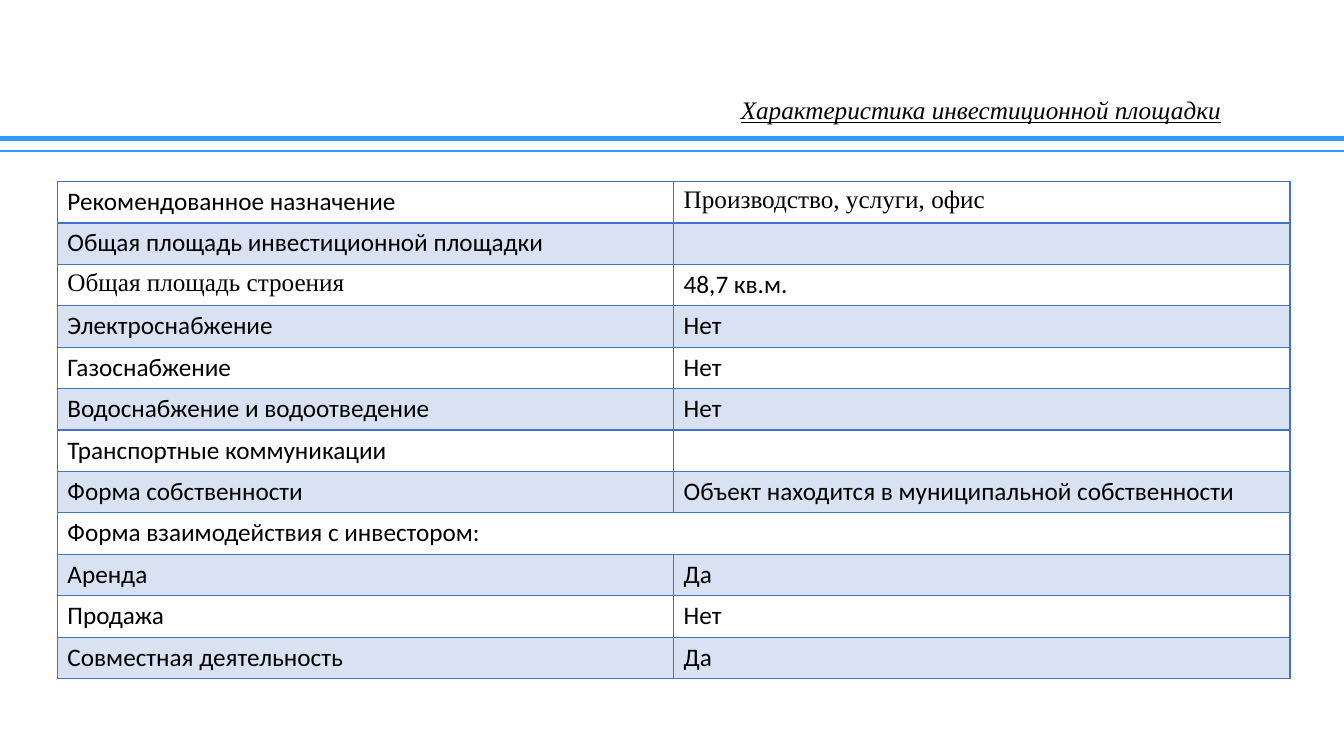
"""Build the slide that describes an investment site."""
from lxml.etree import SubElement
from pptx import Presentation
from pptx.dml.color import RGBColor
from pptx.enum.shapes import MSO_CONNECTOR
from pptx.enum.text import MSO_ANCHOR, PP_ALIGN
from pptx.oxml.ns import qn
from pptx.util import Pt

SLIDE_WIDTH, SLIDE_HEIGHT = 960, 540
ROW_HEIGHT, COLUMN_WIDTH = 29.6, 440.2
SANS, SERIF = "Calibri", "Times New Roman"
BLACK, RULE_BLUE, TABLE_BLUE = "000000", "3399FF", "4472C4"
SITE_ROWS = [
    ("Рекомендованное назначение", "Производство, услуги, офис"),
    ("Общая площадь инвестиционной площадки", ""),
    ("Общая площадь строения", "48,7 кв.м."),
    ("Электроснабжение", "Нет"),
    ("Газоснабжение", "Нет"),
    ("Водоснабжение и водоотведение", "Нет"),
    ("Транспортные коммуникации", ""),
    ("Форма собственности", "Объект находится в муниципальной собственности"),
    ("Форма взаимодействия с инвестором:",),
    ("Аренда", "Да"),
    ("Продажа", "Нет"),
    ("Совместная деятельность", "Да"),
]
SERIF_TEXTS = {"Производство, услуги, офис", "Общая площадь строения"}


def color(value):
    return RGBColor.from_string(value)


def add_text(paragraph, text, font_name):
    run = paragraph.add_run()
    run.text = text
    run.font.name = font_name
    run.font.size = Pt(18)
    run.font.color.rgb = color(BLACK)
    return run


def add_rule(slide, top, weight):
    rule = slide.shapes.add_connector(
        MSO_CONNECTOR.STRAIGHT, Pt(0), Pt(top), Pt(SLIDE_WIDTH), Pt(top))
    rule.line.color.rgb = color(RULE_BLUE)
    rule.line.width = Pt(weight)
    SubElement(rule._element.spPr, qn("a:effectLst"))


def format_title(title, text):
    title.left, title.top, title.width, title.height = Pt(480), Pt(70), Pt(441.4), Pt(19.4)
    frame = title.text_frame
    frame.word_wrap = True
    frame.vertical_anchor = MSO_ANCHOR.MIDDLE
    paragraph = frame.paragraphs[0]
    paragraph.alignment = PP_ALIGN.CENTER
    paragraph.line_spacing = 0.9
    run = add_text(paragraph, text, SERIF)
    run.font.italic = True
    run.font.underline = True


def set_borders(cell, bottom_weight):
    properties = cell._tc.get_or_add_tcPr()
    weights = {"a:lnL": 1, "a:lnR": 1, "a:lnT": 1, "a:lnB": bottom_weight}
    for position, (tag, weight) in enumerate(weights.items()):
        line = SubElement(properties, qn(tag), w=str(Pt(weight)))
        fill = SubElement(line, qn("a:solidFill"))
        SubElement(fill, qn("a:srgbClr"), val=TABLE_BLUE)
        properties.insert(position, line)


def set_fill(cell, shaded):
    if not shaded:
        cell.fill.background()
        return
    cell.fill.solid()
    cell.fill.fore_color.rgb = color(TABLE_BLUE)
    tint = cell._tc.tcPr.find(qn("a:solidFill")).find(qn("a:srgbClr"))
    SubElement(tint, qn("a:alpha"), val="20000")


def add_site_table(slide, rows):
    table = slide.shapes.add_table(
        len(rows), 2, Pt(41), Pt(129.6),
        Pt(2 * COLUMN_WIDTH), Pt(len(rows) * ROW_HEIGHT)).table
    table.first_row = False
    table.horz_banding = False
    for column in table.columns:
        column.width = Pt(COLUMN_WIDTH)
    for row_index, texts in enumerate(rows):
        table.rows[row_index].height = Pt(ROW_HEIGHT)
        for cell in table.rows[row_index].cells:
            set_fill(cell, row_index % 2 == 1)
            set_borders(cell, 2 if row_index == 0 else 1)
        if len(texts) == 1:
            table.cell(row_index, 0).merge(table.cell(row_index, 1))
        for column_index, text in enumerate(texts):
            if text:
                paragraph = table.cell(row_index, column_index).text_frame.paragraphs[0]
                add_text(paragraph, text, SERIF if text in SERIF_TEXTS else SANS)


def main():
    presentation = Presentation()
    presentation.slide_width = Pt(SLIDE_WIDTH)
    presentation.slide_height = Pt(SLIDE_HEIGHT)
    slide = presentation.slides.add_slide(presentation.slide_layouts[5])
    add_rule(slide, 99.2, 3.5)
    add_rule(slide, 108, 1.5)
    format_title(slide.shapes.title, "Характеристика инвестиционной площадки")
    add_site_table(slide, SITE_ROWS)
    presentation.save("out.pptx")


if __name__ == "__main__":
    main()
